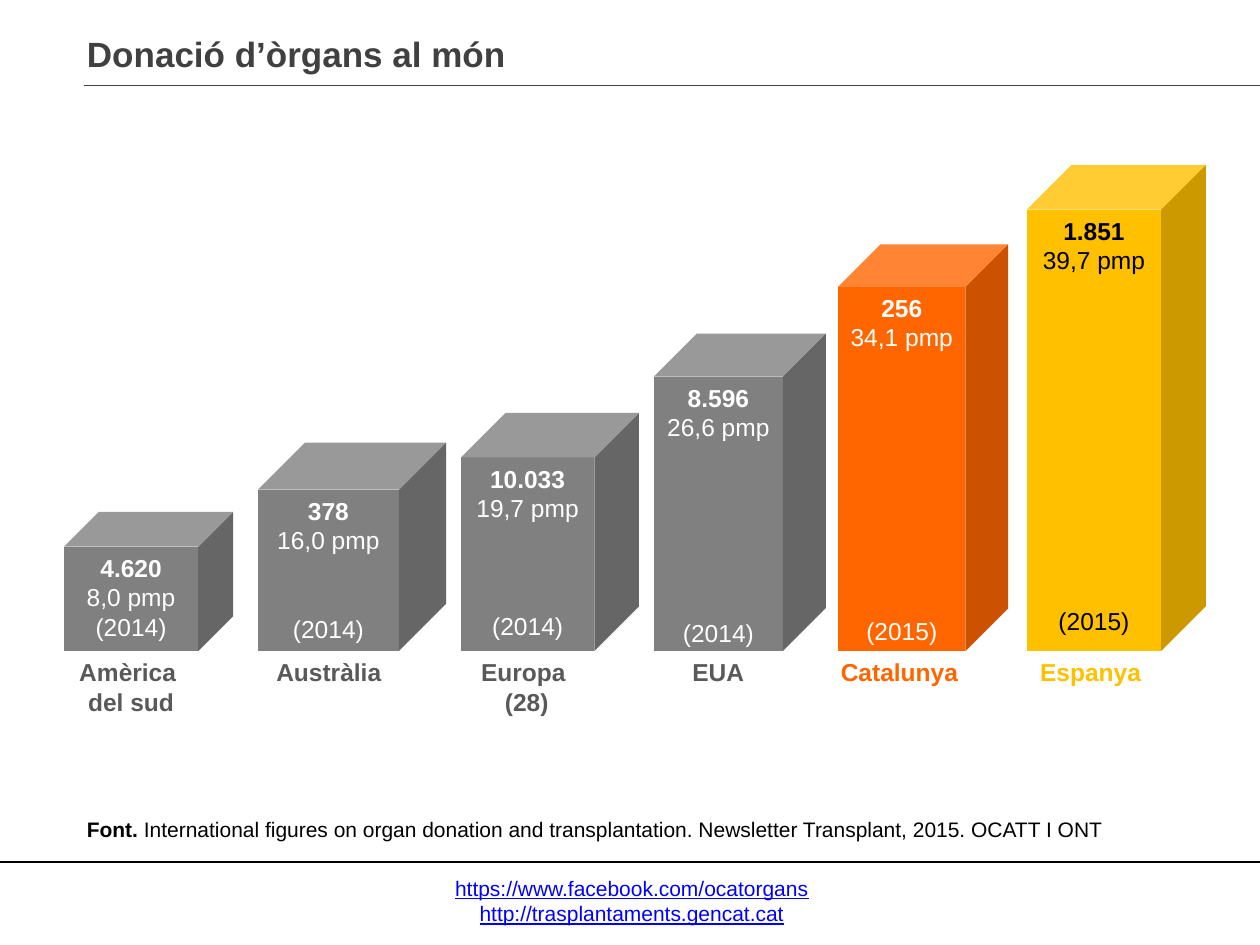
import pptx
import pptx.util
import pptx.dml.color
import pptx.enum.shapes
import pptx.enum.text
import pptx.oxml

Pt = pptx.util.Pt
SHAPE = pptx.enum.shapes.MSO_SHAPE
ALIGN = pptx.enum.text.PP_ALIGN
ANCHOR = pptx.enum.text.MSO_ANCHOR
EMPTY_EFFECTS = ('<a:effectLst xmlns:a='
                 '"http://schemas.openxmlformats.org/drawingml/2006/main"/>')


def rgb(value):
    return pptx.dml.color.RGBColor.from_string(value)


def style(paragraph, size, color, bold=None, align=ALIGN.CENTER):
    paragraph.alignment = align
    paragraph.font.name = "Arial"
    paragraph.font.size = Pt(size)
    paragraph.font.color.rgb = rgb(color)
    paragraph.font.bold = bold


deck = pptx.Presentation()
deck.slide_width, deck.slide_height = Pt(720), Pt(540)
slide = deck.slides.add_slide(deck.slide_layouts[5])
shapes = slide.shapes

# Title
title = shapes.title
title.left, title.top, title.width, title.height = Pt(42.5), Pt(15.1), Pt(677.5), Pt(31.7)
title.text_frame.text = "Donació d’òrgans al món"
title.text_frame.vertical_anchor = ANCHOR.TOP
style(title.text_frame.paragraphs[0], 20, "404040", True, ALIGN.LEFT)

# Rules under the title and above the links
for left, y, color, weight in [(48.2, 48.9, "404040", 1), (0, 492.5, "000000", 0.75)]:
    rule = shapes.add_connector(pptx.enum.shapes.MSO_CONNECTOR.STRAIGHT,
                                Pt(left), Pt(y), Pt(720), Pt(y))
    rule.line.color.rgb = rgb(color)
    rule.line.width = Pt(weight)
    rule._element.spPr.append(pptx.oxml.parse_xml(EMPTY_EFFECTS))

# Donation bars: all stand on one baseline, the year is pushed down by a gap
BASELINE = 372
GREY, DARK, WHITE = "808080", "595959", "FFFFFF"
regions = [
    # region lines, label centre, left, right, top, fill, text, label, donors, rate, year, gap
    (["Amèrica ", "del sud"], 74.9, 36.6, 133.2, 292.5, GREY, WHITE, DARK,
     "4.620", "8,0 pmp", "(2014)", 0),
    (["Austràlia"], 187.9, 147.4, 254.9, 253, GREY, WHITE, DARK,
     "378", "16,0 pmp", "(2014)", 33.6),
    (["Europa ", "(28)"], 301, 263.4, 365.1, 236, GREY, WHITE, DARK,
     "10.033", "19,7 pmp", "(2014)", 50.4),
    (["EUA"], 410.4, 373.7, 472, 190.6, GREY, WHITE, DARK,
     "8.596", "26,6 pmp", "(2014)", 100.8),
    (["Catalunya"], 514, 478.9, 576, 139.6, "FF6600", WHITE, "FF6600",
     "256", "34,1 pmp", "(2015)", 151.2),
    (["Espanya"], 623.2, 586.8, 689.1, 94.2, "FFC000", "000000", "FFC000",
     "1.851", "39,7 pmp", "(2015)", 189.5),
]
for (region, centre, left, right, top, fill, text_color, label_color,
     donors, rate, year, gap) in regions:
    bar = shapes.add_shape(SHAPE.CUBE, Pt(left), Pt(top),
                           Pt(right - left), Pt(BASELINE - top))
    bar.shadow.inherit = False
    bar.fill.solid()
    bar.fill.fore_color.rgb = rgb(fill)
    bar.line.fill.background()
    figures = bar.text_frame
    figures.word_wrap = True
    figures.vertical_anchor = ANCHOR.TOP
    figures.margin_left = figures.margin_right = 0
    figures.text = "\n".join([donors, rate, year])
    for paragraph in figures.paragraphs:
        style(paragraph, 14, text_color, paragraph.text == donors)
    figures.paragraphs[2].space_before = Pt(gap)

    label = shapes.add_textbox(Pt(centre - 45), Pt(BASELINE), Pt(90), Pt(41)).text_frame
    label.word_wrap = True
    label.text = "\n".join(region)
    for paragraph in label.paragraphs:
        style(paragraph, 14, label_color, True)

# Source
source = shapes.add_textbox(Pt(42.5), Pt(463), Pt(603.4), Pt(21.6)).text_frame
source.word_wrap = True
credit = source.paragraphs[0]
style(credit, 12, "000000", align=ALIGN.LEFT)
heading = credit.add_run()
heading.text = "Font. "
heading.font.bold = True
credit.add_run().text = ("International figures on organ donation and transplantation. "
                         "Newsletter Transplant, 2015. OCATT I ONT")

# Web addresses
links = shapes.add_textbox(Pt(252), Pt(496.8), Pt(218.2), Pt(36)).text_frame
links.word_wrap = True
links.text = "https://www.facebook.com/ocatorgans\nhttp://trasplantaments.gencat.cat"
for paragraph in links.paragraphs:
    style(paragraph, 12, "0000FF")
    paragraph.font.underline = True

deck.save("out.pptx")
